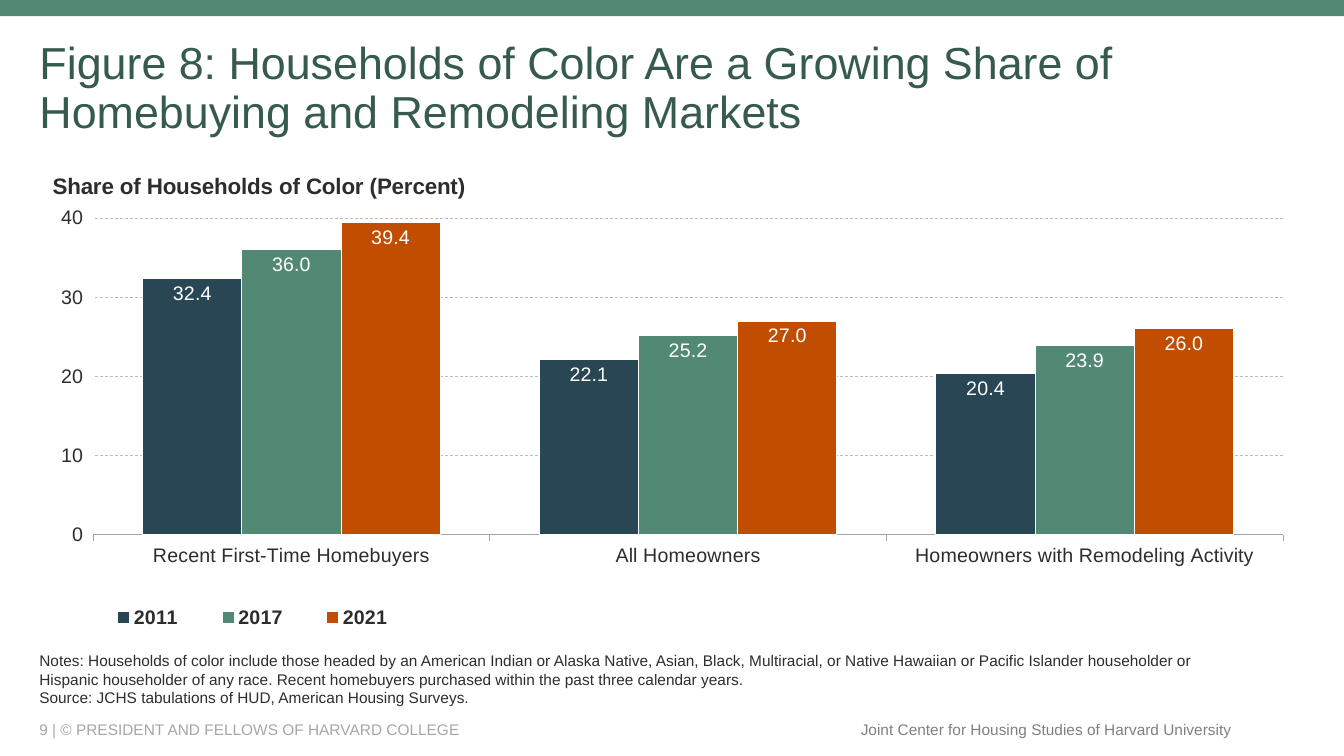
import lxml.etree
import pptx
import pptx.chart.data
import pptx.dml.color
import pptx.enum.chart
import pptx.enum.dml
import pptx.enum.shapes
import pptx.enum.text
import pptx.oxml.ns
import pptx.util

Pt = pptx.util.Pt
ALIGN = pptx.enum.text.PP_ALIGN
ANCHOR = pptx.enum.text.MSO_ANCHOR
FONT = "Arial"
INK, GREEN, DARK_GREEN, GRAY = "2D2D2D", "528975", "365B4E", "A6A6A6"
GROUPS = ["Recent First-Time Homebuyers", "All Homeowners",
          "Homeowners with Remodeling Activity"]
YEARS = {
    "2011": ("284653", [32.4, 22.1, 20.4]),
    "2017": (GREEN, [36.0, 25.2, 23.9]),
    "2021": ("C14D00", [39.4, 27.0, 26.0]),
}


def colour(value):
    """Turn a hex string into a colour."""
    return pptx.dml.color.RGBColor.from_string(value)


def style_font(font, size, hue, bold=False):
    """Set the face, size, colour and weight of a font."""
    font.name, font.size, font.bold = FONT, Pt(size), bold
    font.color.rgb = colour(hue)


def write_text(frame, text, size=11, hue=INK, bold=False, align=ALIGN.LEFT,
               anchor=ANCHOR.MIDDLE, spacing=1.0, wrap=True):
    """Fill a text frame with one paragraph per line of text."""
    frame.word_wrap, frame.vertical_anchor = wrap, anchor
    frame.auto_size = pptx.enum.text.MSO_AUTO_SIZE.NONE
    for index, line in enumerate(text.split("\n")):
        para = frame.add_paragraph() if index else frame.paragraphs[0]
        para.alignment, para.line_spacing = align, spacing
        para.space_before = para.space_after = Pt(0)
        span = para.add_run()
        span.text = line
        style_font(span.font, size, hue, bold)


def add_text(page, box, text, **style):
    """Add a text box to the page."""
    write_text(page.shapes.add_textbox(*map(Pt, box)).text_frame, text, **style)


def add_heading(page, box, text):
    """Place and format the title placeholder."""
    title = page.shapes.title
    title.left, title.top, title.width, title.height = map(Pt, box)
    write_text(title.text_frame, text, size=32, hue=DARK_GREEN, spacing=0.9)


def add_frame(page, box):
    """Draw the top band and the footer line inside the page box."""
    left, top, width, height = box
    band = page.shapes.add_shape(pptx.enum.shapes.MSO_SHAPE.RECTANGLE,
                                 Pt(left), Pt(top), Pt(width), Pt(11.5))
    band.shadow.inherit = False
    band.fill.solid()
    band.fill.fore_color.rgb = colour(GREEN)
    band.line.fill.background()
    add_text(page, (left + 21, top + height - 26.5, 570, 14.5),
             "9 | © PRESIDENT AND FELLOWS OF HARVARD COLLEGE", hue=GRAY)
    add_text(page, (left + width - 354, top + height - 29.5, 281, 21),
             "Joint Center for Housing Studies of Harvard University",
             hue="808080", align=ALIGN.RIGHT, wrap=False)


def set_layout(parent, position, inner=False, **extent):
    """Give a chart part a manual layout in fractions of the chart."""
    tag = pptx.oxml.ns.qn
    for old in parent.findall(tag("c:layout")):
        parent.remove(old)
    layout = lxml.etree.Element(tag("c:layout"))
    manual = lxml.etree.SubElement(layout, tag("c:manualLayout"))
    settings = [("layoutTarget", "inner")] if inner else []
    settings += [("xMode", "edge"), ("yMode", "edge"), *extent.items()]
    for name, value in settings:
        lxml.etree.SubElement(manual, tag(f"c:{name}"), val=str(value))
    parent.insert(position, layout)


def style_axes(chart):
    """Format the category axis, the value axis and the gridlines."""
    groups, percent = chart.category_axis, chart.value_axis
    for axis in (groups, percent):
        style_font(axis.tick_labels.font, 14, INK)
        axis.major_tick_mark = pptx.enum.chart.XL_TICK_MARK.OUTSIDE
    groups.format.line.color.rgb = colour(GRAY)
    groups.format.line.width = Pt(0.5)
    percent.minimum_scale, percent.maximum_scale = 0, 40
    percent.major_unit = 10
    percent.tick_labels.number_format = "#,##0"
    percent.tick_labels.number_format_is_linked = False
    percent.format.line.fill.background()
    grid = percent.major_gridlines.format.line
    grid.color.rgb, grid.width = colour("BDBDBD"), Pt(0.5)
    grid.dash_style = pptx.enum.dml.MSO_LINE.DASH


def style_columns(plot):
    """Colour and label the columns of each year."""
    plot.gap_width, plot.overlap = 100, 0
    plot.vary_by_categories = False
    for series in plot.series:
        series.format.fill.solid()
        series.format.fill.fore_color.rgb = colour(YEARS[series.name][0])
        series.format.line.color.rgb = colour("FFFFFF")
        series.format.line.width = Pt(0.75)
        labels = series.data_labels
        labels.show_value = True
        labels.number_format, labels.number_format_is_linked = "0.0", False
        labels.position = pptx.enum.chart.XL_LABEL_POSITION.INSIDE_END
        style_font(labels.font, 14, "FFFFFF")


def add_share_chart(page, box):
    """Add the clustered column chart with its title and legend."""
    data = pptx.chart.data.CategoryChartData(number_format="0.0")
    data.categories = GROUPS
    for year, (_, shares) in YEARS.items():
        data.add_series(year, shares)
    chart = page.shapes.add_chart(
        pptx.enum.chart.XL_CHART_TYPE.COLUMN_CLUSTERED,
        *map(Pt, box), data).chart
    style_font(chart.font, 10, "5A5A5A")
    style_axes(chart)
    style_columns(chart.plots[0])
    chart.has_title = chart.has_legend = True
    heading = chart.chart_title.text_frame.paragraphs[0]
    heading.alignment = ALIGN.LEFT
    span = heading.add_run()
    span.text = "Share of Households of Color (Percent)"
    style_font(span.font, 16, INK, bold=True)
    legend = chart.legend
    legend.position = pptx.enum.chart.XL_LEGEND_POSITION.BOTTOM
    legend.include_in_layout = False
    style_font(legend.font, 14, INK, bold=True)
    plot_area = chart._chartSpace.xpath("c:chart/c:plotArea")[0]
    set_layout(plot_area, 0, inner=True, x=0.05, y=0.134, w=0.933, h=0.655)
    set_layout(chart.chart_title._element, 1, x=0.015, y=0.03)
    set_layout(legend._element, 1, x=0.04, y=0.925, w=0.27, h=0.07)


def add_notes(page, box):
    """Add the notes and source under the chart."""
    add_text(page, box,
             "Notes: Households of color include those headed by an American "
             "Indian or Alaska Native, Asian, Black, Multiracial, or Native "
             "Hawaiian or Pacific Islander householder or Hispanic householder "
             "of any race. Recent homebuyers purchased within the past three "
             "calendar years.\n"
             "Source: JCHS tabulations of HUD, American Housing Surveys.",
             anchor=ANCHOR.BOTTOM)


def main():
    """Build and save the deck."""
    deck = pptx.Presentation()
    deck.slide_width, deck.slide_height = Pt(960), Pt(540)
    page = deck.slides.add_slide(deck.slide_layouts.get_by_name("Title Only"))
    add_frame(page, (0, 0, 960, 540))
    add_heading(page, (21, 29, 911, 70), "Figure 8: Households of Color Are a "
                "Growing Share of Homebuying and Remodeling Markets")
    add_share_chart(page, (21, 109.5, 911, 345.5))
    add_notes(page, (21, 466.5, 846, 42))
    deck.save("out.pptx")


if __name__ == "__main__":
    main()
